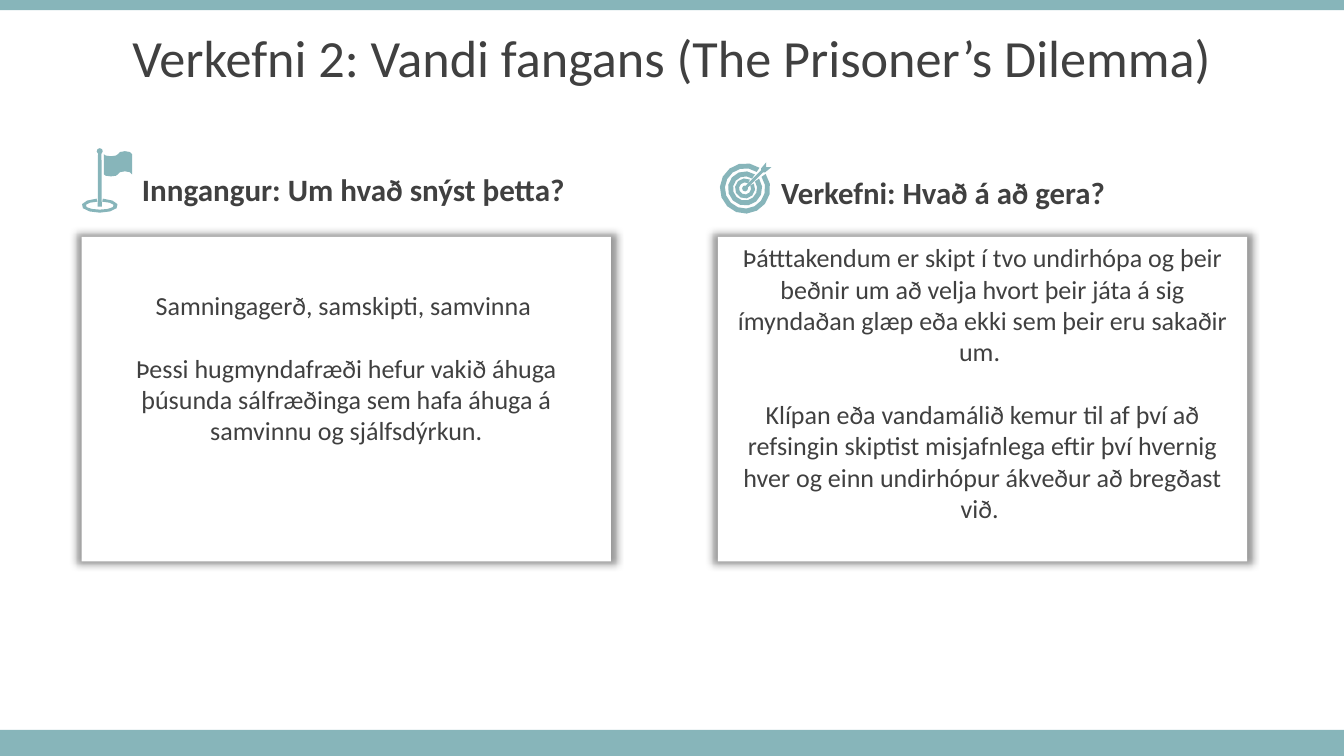
from dataclasses import dataclass
from math import cos, radians, sin

from lxml import etree
from pptx import Presentation
from pptx import util as u
from pptx.dml.color import RGBColor
from pptx.enum import shapes, text
from pptx.oxml import ns

TEAL = RGBColor(0x87, 0xB5, 0xBA)
WHITE = RGBColor(0xFF, 0xFF, 0xFF)
DARK_GREY = RGBColor(0x40, 0x40, 0x40)
FONT = "Calibri"
BODY_SIZE = 18.6
BLANK_LINE = 22.8

Point = tuple[float, float]
Contour = list[Point]


@dataclass
class Panel:
    left: float
    top_inset: float
    paragraphs: list[str]


@dataclass
class Heading:
    left: float
    top: float
    wording: str
    size: float
    line_spacing: float


@dataclass
class Ring:
    radius_x: float
    radius_y: float
    hole_x: float
    hole_y: float
    gap_centre: float
    half_gap: float
    steps: int


PANELS = [
    Panel(0.81, 0.52, [
        "Samningagerð, samskipti, samvinna ",
        "Þessi hugmyndafræði hefur vakið áhuga þúsunda sálfræðinga "
        "sem hafa áhuga á samvinnu og sjálfsdýrkun.",
    ]),
    Panel(7.12, 0.05, [
        "Þátttakendum er skipt í tvo undirhópa og þeir beðnir um að velja hvort "
        "þeir játa á sig ímyndaðan glæp eða ekki sem þeir eru sakaðir um. ",
        "Klípan eða vandamálið kemur til af því að refsingin skiptist misjafnlega "
        "eftir því hvernig hver og einn undirhópur ákveður að bregðast við. ",
    ]),
]
HEADINGS = [
    Heading(1.31, 1.71, "Inngangur: Um hvað snýst þetta?", 22.2, 0.8),
    Heading(7.65, 1.7, "Verkefni: Hvað á að gera?", 22, 1.0),
]
BASE_RING = Ring(0.18, 0.07, 0.14, 0.04, -90, 10, 10)
TARGET_RINGS = [
    Ring(outer, outer, inner, inner, -45, half_gap, steps)
    for outer, inner, half_gap, steps in [
        (0.25, 0.2, 10, 14), (0.17, 0.12, 10, 12), (0.1, 0.06, 16, 9)]
]


def format_paragraph(paragraph, size: float, bold: bool = False) -> None:
    for run in paragraph.runs:
        run.font.name = FONT
        run.font.size = u.Pt(size)
        run.font.bold = bold
        run.font.color.rgb = DARK_GREY


def fill_plain(shape, colour: RGBColor) -> None:
    shape.shadow.inherit = False
    shape.fill.solid()
    shape.fill.fore_color.rgb = colour
    shape.line.fill.background()


def add_rectangle(slide, left: float, top: float, width: float, height: float,
                  colour: RGBColor):
    shape = slide.shapes.add_shape(
        shapes.MSO_SHAPE.RECTANGLE,
        u.Inches(left), u.Inches(top), u.Inches(width), u.Inches(height))
    fill_plain(shape, colour)
    return shape


def add_glow_shadow(shape) -> None:
    effects = shape._element.spPr.find(ns.qn("a:effectLst"))
    shadow = etree.SubElement(effects, ns.qn("a:outerShdw"), blurRad=str(u.Pt(5)),
                              dist="0", dir="0", sx="102000", sy="102000",
                              algn="ctr", rotWithShape="0")
    colour = etree.SubElement(shadow, ns.qn("a:srgbClr"), val="000000")
    etree.SubElement(colour, ns.qn("a:alpha"), val="40000")


def add_panel(slide, panel: Panel) -> None:
    shape = add_rectangle(slide, panel.left, 2.35, 5.25, 3.22, WHITE)
    add_glow_shadow(shape)
    frame = shape.text_frame
    frame.word_wrap = True
    frame.vertical_anchor = text.MSO_ANCHOR.TOP
    frame.margin_left = frame.margin_right = u.Inches(0.13)
    frame.margin_top, frame.margin_bottom = u.Inches(panel.top_inset), 0
    frame.text = "\n".join(panel.paragraphs)
    for paragraph in frame.paragraphs:
        paragraph.alignment = text.PP_ALIGN.CENTER
        format_paragraph(paragraph, BODY_SIZE)
    for paragraph in frame.paragraphs[1:]:
        paragraph.space_before = u.Pt(BLANK_LINE)


def add_heading(slide, heading: Heading) -> None:
    box = slide.shapes.add_textbox(
        u.Inches(heading.left), u.Inches(heading.top), u.Inches(4.74), u.Inches(0.41))
    frame = box.text_frame
    frame.word_wrap = True
    frame.vertical_anchor = text.MSO_ANCHOR.MIDDLE
    frame.text = heading.wording
    frame.paragraphs[0].line_spacing = heading.line_spacing
    format_paragraph(frame.paragraphs[0], heading.size, bold=True)


def arc(centre: Point, radius_x: float, radius_y: float,
        start: float, end: float, steps: int) -> Contour:
    angles = [radians(start + (end - start) * step / steps) for step in range(steps + 1)]
    return [(centre[0] + radius_x * cos(a), centre[1] + radius_y * sin(a)) for a in angles]


def ring_contour(centre: Point, ring: Ring) -> Contour:
    start = ring.gap_centre + ring.half_gap
    end = ring.gap_centre + 360 - ring.half_gap
    return (arc(centre, ring.radius_x, ring.radius_y, start, end, ring.steps)
            + arc(centre, ring.hole_x, ring.hole_y, end, start, ring.steps))


def flag_contours() -> list[Contour]:
    top = (arc((1.1, 1.53), 0.07, 0.02, 180, 0, 4)
           + arc((1.24, 1.53), 0.07, 0.03, 180, 360, 4)[1:])
    bottom = [(x, y + 0.2) for x, y in reversed(top)]
    pole = arc((0.99, 1.5), 0.03, 0.03, 125, 415, 6) + [(1.01, 2.05), (0.97, 2.05)]
    return [ring_contour((0.99, 2.04), BASE_RING), top + bottom, pole]


def target_contours() -> list[Contour]:
    centre = (7.39, 1.87)
    arrow = [(7.4, 1.84), (7.55, 1.69), (7.55, 1.67), (7.6, 1.61), (7.6, 1.66),
             (7.65, 1.66), (7.59, 1.71), (7.57, 1.71), (7.42, 1.86)]
    bullseye = arc(centre, 0.03, 0.03, -20, 290, 6)
    return [ring_contour(centre, ring) for ring in TARGET_RINGS] + [bullseye + arrow]


def add_icon(slide, contours: list[Contour]) -> None:
    outlines = [[(u.Inches(x), u.Inches(y)) for x, y in contour] for contour in contours]
    builder = slide.shapes.build_freeform(*outlines[0][0])
    builder.add_line_segments(outlines[0][1:])
    for outline in outlines[1:]:
        builder.move_to(*outline[0])
        builder.add_line_segments(outline[1:])
    fill_plain(builder.convert_to_shape(), TEAL)


def add_title(slide, wording: str) -> None:
    title = slide.shapes.title
    title.left, title.top = u.Inches(0), u.Inches(0.18)
    title.width, title.height = u.Inches(13.33), u.Inches(0.84)
    frame = title.text_frame
    frame.word_wrap = True
    frame.auto_size = text.MSO_AUTO_SIZE.NONE
    frame.vertical_anchor = text.MSO_ANCHOR.MIDDLE
    frame.text = wording
    paragraph = frame.paragraphs[0]
    paragraph.alignment = text.PP_ALIGN.CENTER
    paragraph.line_spacing = 0.9
    format_paragraph(paragraph, 37.3)


def main() -> None:
    presentation = Presentation()
    presentation.slide_width, presentation.slide_height = u.Inches(13.33), u.Inches(7.5)
    slide = presentation.slides.add_slide(presentation.slide_layouts[5])

    # Edge bands and title
    add_rectangle(slide, 0, 7.24, 13.33, 0.26, TEAL)
    add_rectangle(slide, 0, 0, 13.33, 0.1, TEAL)
    add_title(slide, "Verkefni 2: Vandi fangans (The Prisoner’s Dilemma)")

    # Two columns: panel, icon and heading
    for panel in PANELS:
        add_panel(slide, panel)
    for contours in (flag_contours(), target_contours()):
        add_icon(slide, contours)
    for heading in HEADINGS:
        add_heading(slide, heading)

    presentation.save("out.pptx")


if __name__ == "__main__":
    main()
